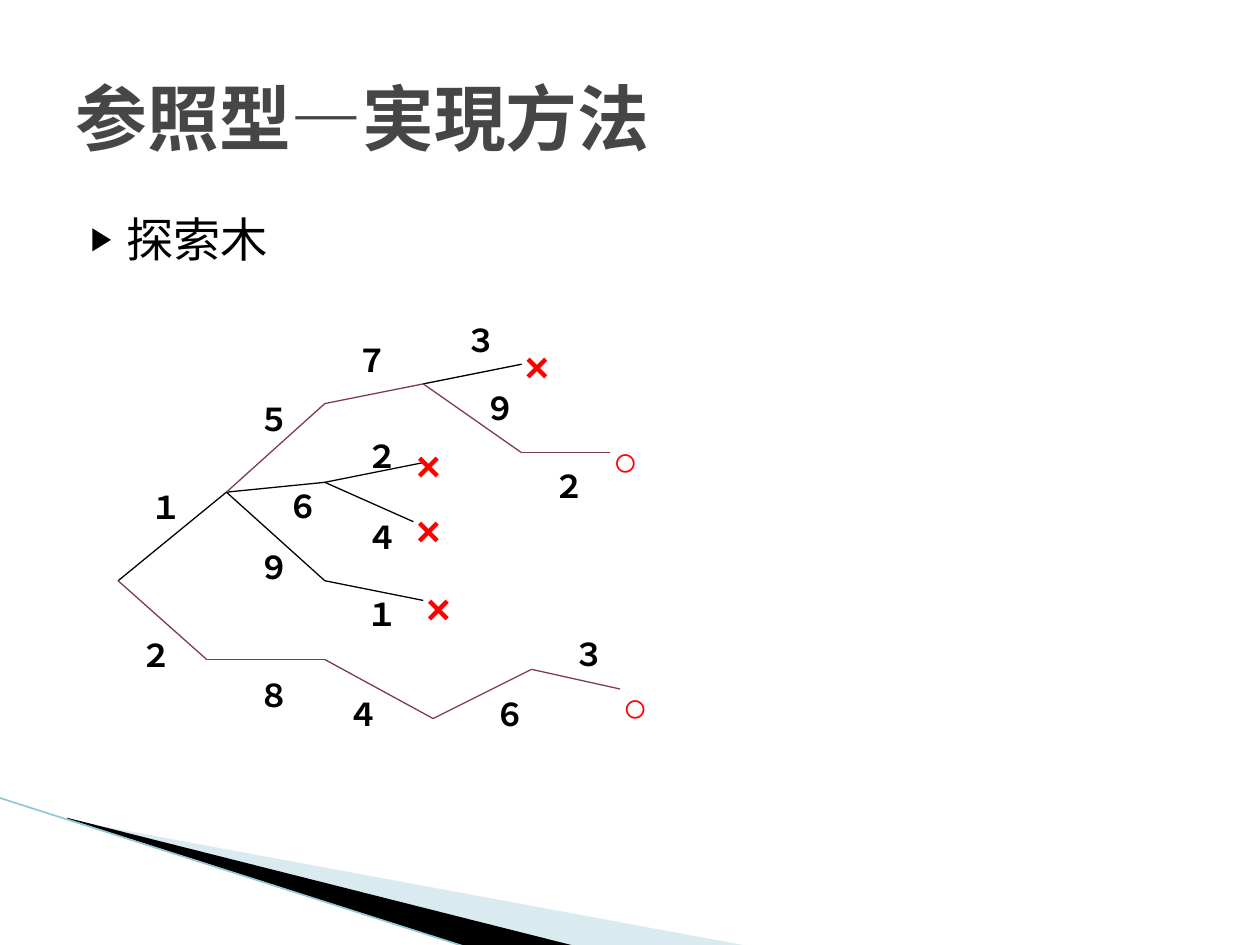
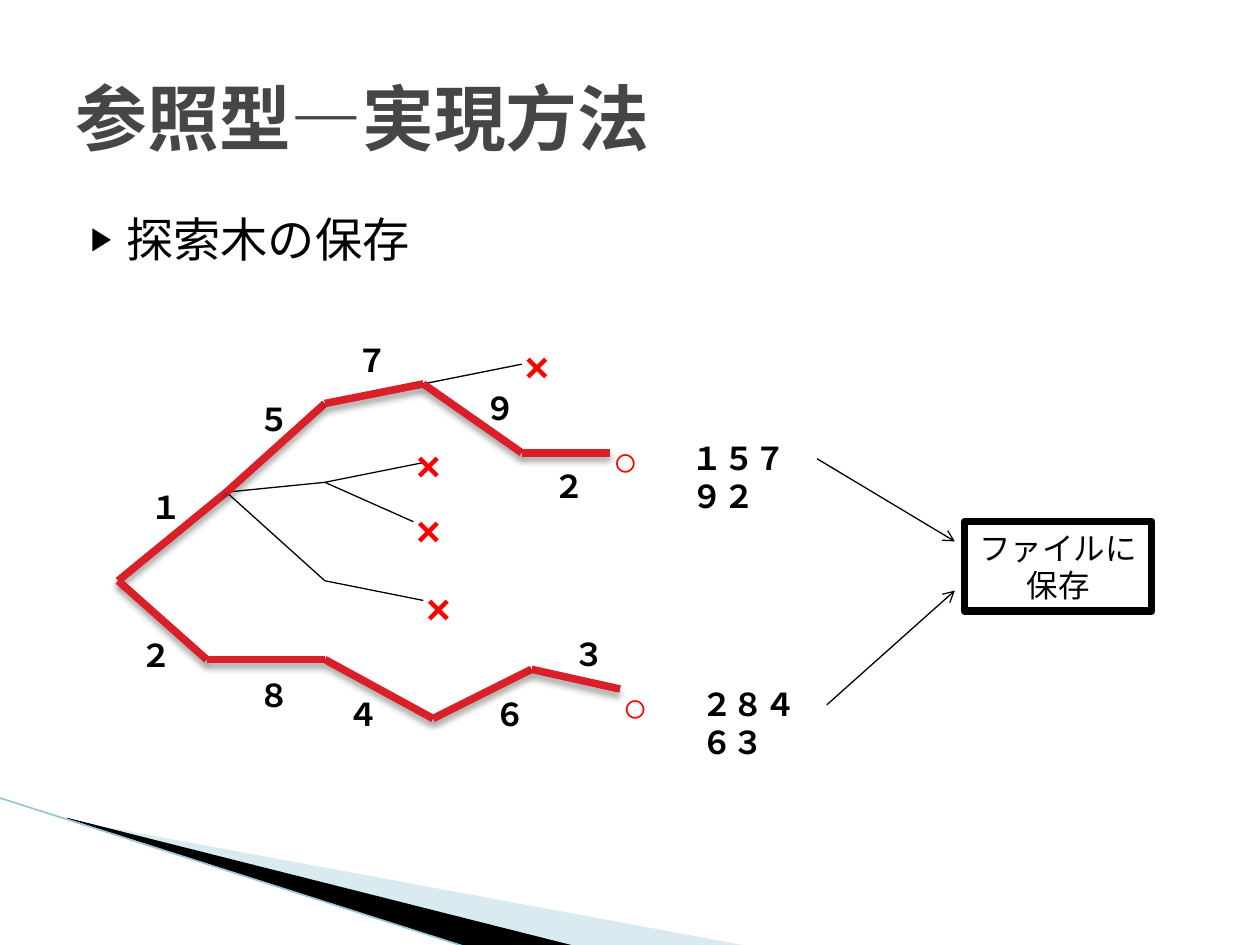
import itertools

import pptx
import pptx.dml.color
import pptx.enum.shapes
import pptx.enum.text
import pptx.oxml
import pptx.oxml.ns
import pptx.util

COLORS = {
    "text": "000000",
    "title": "464646",
    "mark": "FF0000",
    "branch": "000000",
    "solved": "7D3C4A",
    "saved": "DA1F28",
    "pale band": "A0CBDC",
    "dark band": "000000",
    "band edge": "97C5D8",
    "box": "FFFFFF",
}
FONT = "Courier New"
THIN, THICK = 0.75, 4.33
STEP = 720 / 128  # the tree is laid out on a grid of 128 columns

# Tree nodes, as (column, row) on the grid
ROOT, FORK = (12, 59), (23, 50)
TRUNK = [[ROOT, FORK]]
SOLVED_PATHS = [
    [FORK, (33, 41), (43, 39), (53, 46), (62, 46)],
    [ROOT, (21, 67), (33, 67), (44, 73), (54, 68), (63, 70)],
]
DEAD_PATHS = [
    [FORK, (33, 49), (43, 47)],
    [(33, 49), (42, 53)],
    [FORK, (33, 59), (43, 61)],
    [(43, 39), (53, 37)],
]
MARKS = [
    ("×", 41, 50.6), ("×", 42, 58.5), ("×", 52, 34), ("×", 41, 44),
    ("○", 61, 43.5), ("○", 62, 68.5),
]
SOLVED_LABELS = [
    ("１", 14, 49), ("５", 25, 40), ("７", 35, 34), ("９", 48, 38.9), ("２", 55, 46.8),
    ("２", 13, 64), ("８", 25, 68), ("４", 34, 70), ("６", 49, 70), ("３", 57, 63.9),
]
DEAD_LABELS = [
    ("３", 46, 32), ("２", 36, 43.8), ("４", 36, 52),
    ("１", 36, 59.8), ("９", 25, 55), ("６", 28, 48.8),
]
SAVED_PATHS = [("１５７９２", 69, 44), ("２８４６３", 70, 69)]
SAVE_ARROWS = [((83, 46.6), (97, 55)), ((84, 71.6), (97, 60))]


def rgb(name):
    return pptx.dml.color.RGBColor.from_string(COLORS[name])


def grid(*values):
    return [pptx.util.Pt(value * STEP) for value in values]


def add_xml(parent, tag, attributes="", inner=""):
    namespace = pptx.oxml.ns.nsdecls("a")
    parent.append(pptx.oxml.parse_xml(f"<a:{tag} {namespace} {attributes}>{inner}</a:{tag}>"))


def add_span(para, text, size, color="text", bold=False):
    span = para.add_run()
    span.text = text
    span.font.name = FONT
    span.font.size = pptx.util.Pt(size)
    span.font.bold = bold
    span.font.color.rgb = rgb(color)


def add_label(page, text, column, row, width, height, size=18, color="text"):
    box = page.shapes.add_textbox(*grid(column, row, width, height))
    box.text_frame.word_wrap = True
    box.text_frame.auto_size = pptx.enum.text.MSO_AUTO_SIZE.SHAPE_TO_FIT_TEXT
    add_span(box.text_frame.paragraphs[0], text, size, color, bold=True)


def add_line(page, start, end, color, weight=THIN, shadow=False, arrow=False):
    """Draw a straight line between two points given as lengths."""
    line = page.shapes.add_connector(pptx.enum.shapes.MSO_CONNECTOR.STRAIGHT, *start, *end)
    line.line.color.rgb = rgb(color)
    line.line.width = pptx.util.Pt(weight)
    properties = line.element.spPr
    if arrow:
        add_xml(properties.find(pptx.oxml.ns.qn("a:ln")), "tailEnd", 'type="arrow"')
    shade = ""
    if shadow:
        shade = (
            f'<a:outerShdw blurRad="{pptx.util.Pt(4)}" dist="{pptx.util.Pt(3)}" dir="5400000"'
            ' rotWithShape="0"><a:srgbClr val="000000"><a:alpha val="35000"/></a:srgbClr>'
            "</a:outerShdw>"
        )
    add_xml(properties, "effectLst", inner=shade)
    return line


def add_paths(page, paths, color, weight=THIN, shadow=False):
    for path in paths:
        for start, end in itertools.pairwise(path):
            add_line(page, grid(*start), grid(*end), color, weight, shadow)


def add_band(page, points, color, alpha=100):
    corners = [(pptx.util.Pt(x), pptx.util.Pt(y)) for x, y in points]
    builder = page.shapes.build_freeform(*corners[0], scale=1.0)
    builder.add_line_segments(corners[1:], close=True)
    band = builder.convert_to_shape()
    band.shadow.inherit = False
    band.fill.solid()
    band.fill.fore_color.rgb = rgb(color)
    band.line.fill.background()
    if alpha < 100:
        fill_color = next(band.element.spPr.iter(pptx.oxml.ns.qn("a:srgbClr")))
        add_xml(fill_color, "alpha", f'val="{alpha * 1000}"')
    return band


def place(shape, left, top, width, height):
    shape.left, shape.top = pptx.util.Pt(left), pptx.util.Pt(top)
    shape.width, shape.height = pptx.util.Pt(width), pptx.util.Pt(height)


def set_up_layout(layout, page):
    """Place the layout's title and body, and move the corner bands from page to layout."""
    place(layout.placeholders[0], 36, 21.6, 648, 90)
    place(layout.placeholders[1], 36, 116.6, 648, 46.8)
    edge = [[pptx.util.Pt(value) for value in point] for point in ((-0.7, 455.8), (267.1, 541.4))]
    bands = [
        add_band(page, [(39.6, 468.7), (428.4, 540.7), (328.3, 540.7), (39.6, 468)],
                 "pale band", alpha=40),
        add_band(page, [(38.2, 467.3), (329, 540.7), (267.8, 541.4), (38.9, 468)], "dark band"),
        add_line(page, *edge, "band edge", 0.95),
    ]
    for position, band in enumerate(bands, start=2):
        layout.shapes.element.insert(position, band.element)


def fill_heading(page, topic):
    title, body = page.shapes.title, page.placeholders[1]
    title.text_frame.vertical_anchor = pptx.enum.text.MSO_ANCHOR.MIDDLE
    para = title.text_frame.paragraphs[0]
    para.alignment = pptx.enum.text.PP_ALIGN.LEFT
    add_span(para, "参照型―実現方法", 41, "title", bold=True)

    body.text_frame.auto_size = pptx.enum.text.MSO_AUTO_SIZE.NONE
    para = body.text_frame.paragraphs[0]
    para.space_before = pptx.util.Pt(0)
    properties = para._p.get_or_add_pPr()
    properties.set("marL", str(pptx.util.Pt(28.8)))
    properties.set("indent", str(pptx.util.Pt(-20.16)))
    add_xml(properties, "buSzPct", 'val="68000"')
    add_xml(properties, "buChar", 'char="▶"')
    add_span(para, topic, 27)


def add_marks_and_labels(page, labels):
    for mark, column, row in MARKS:
        add_label(page, mark, column, row, 6, 6.4, 24, "mark")
    for digit, column, row in labels:
        add_label(page, digit, column, row, 5, 5.1)


def add_file_box(page):
    box = page.shapes.add_shape(pptx.enum.shapes.MSO_SHAPE.RECTANGLE, *grid(98, 53, 19, 9.1))
    box.shadow.inherit = False
    box.fill.solid()
    box.fill.fore_color.rgb = rgb("box")
    box.line.color.rgb = rgb("text")
    box.line.width = pptx.util.Pt(THICK)
    frame = box.text_frame
    frame.word_wrap = True
    for para, text in zip([frame.paragraphs[0], frame.add_paragraph()], ["ファイルに", "保存"]):
        para.alignment = pptx.enum.text.PP_ALIGN.CENTER
        add_span(para, text, 18)


def fill_search_tree(page):
    fill_heading(page, "探索木")
    add_paths(page, TRUNK + DEAD_PATHS, "branch")
    add_paths(page, SOLVED_PATHS, "solved")
    add_marks_and_labels(page, SOLVED_LABELS + DEAD_LABELS)


def fill_saved_tree(page):
    fill_heading(page, "探索木の保存")
    add_paths(page, DEAD_PATHS, "branch")
    add_paths(page, TRUNK + SOLVED_PATHS, "saved", THICK, shadow=True)
    add_marks_and_labels(page, SOLVED_LABELS)
    for digits, column, row in SAVED_PATHS:
        add_label(page, digits, column, row, 14, 5.1)
    for start, end in SAVE_ARROWS:
        add_line(page, grid(*start), grid(*end), "branch", arrow=True)
    add_file_box(page)


def main():
    deck = pptx.Presentation()
    deck.slide_width, deck.slide_height = pptx.util.Pt(720), pptx.util.Pt(540)
    layout = deck.slide_layouts[1]
    tree_page, saved_page = [deck.slides.add_slide(layout) for _ in range(2)]
    set_up_layout(layout, tree_page)
    fill_search_tree(tree_page)
    fill_saved_tree(saved_page)
    deck.save("out.pptx")


if __name__ == "__main__":
    main()
